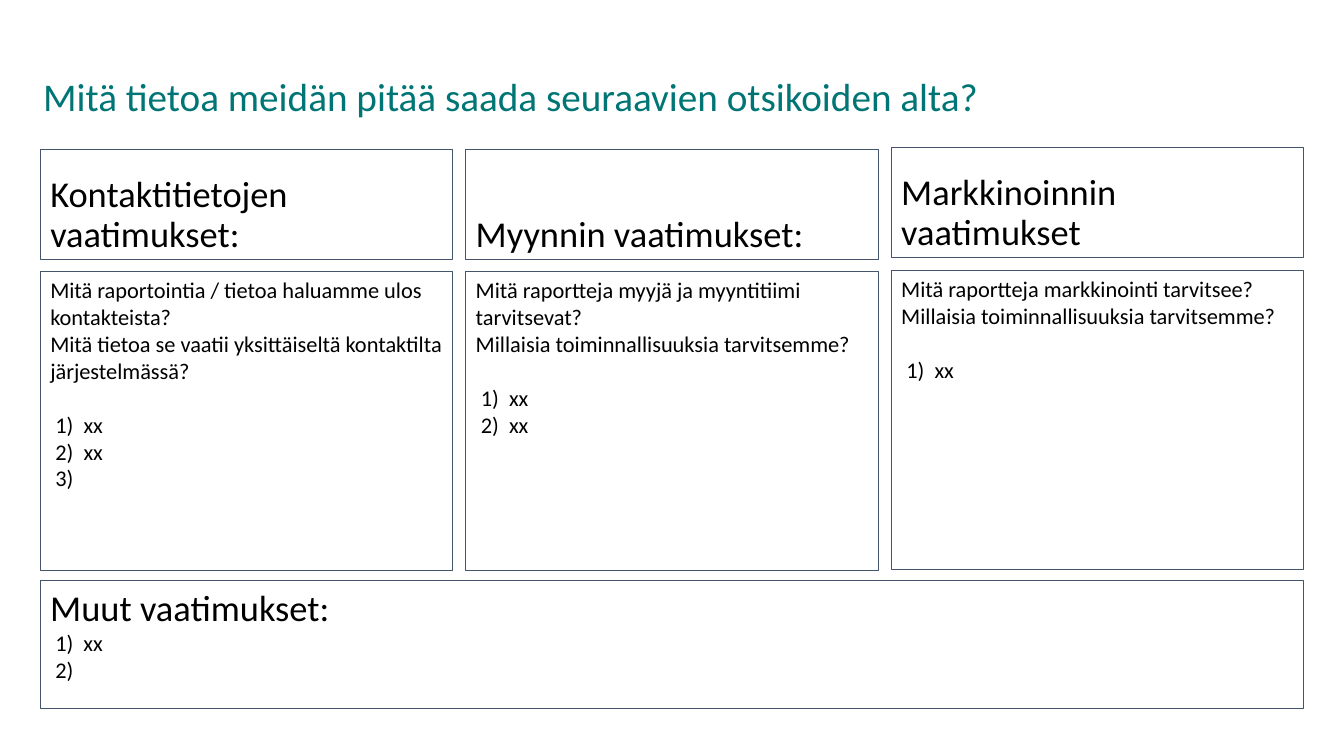
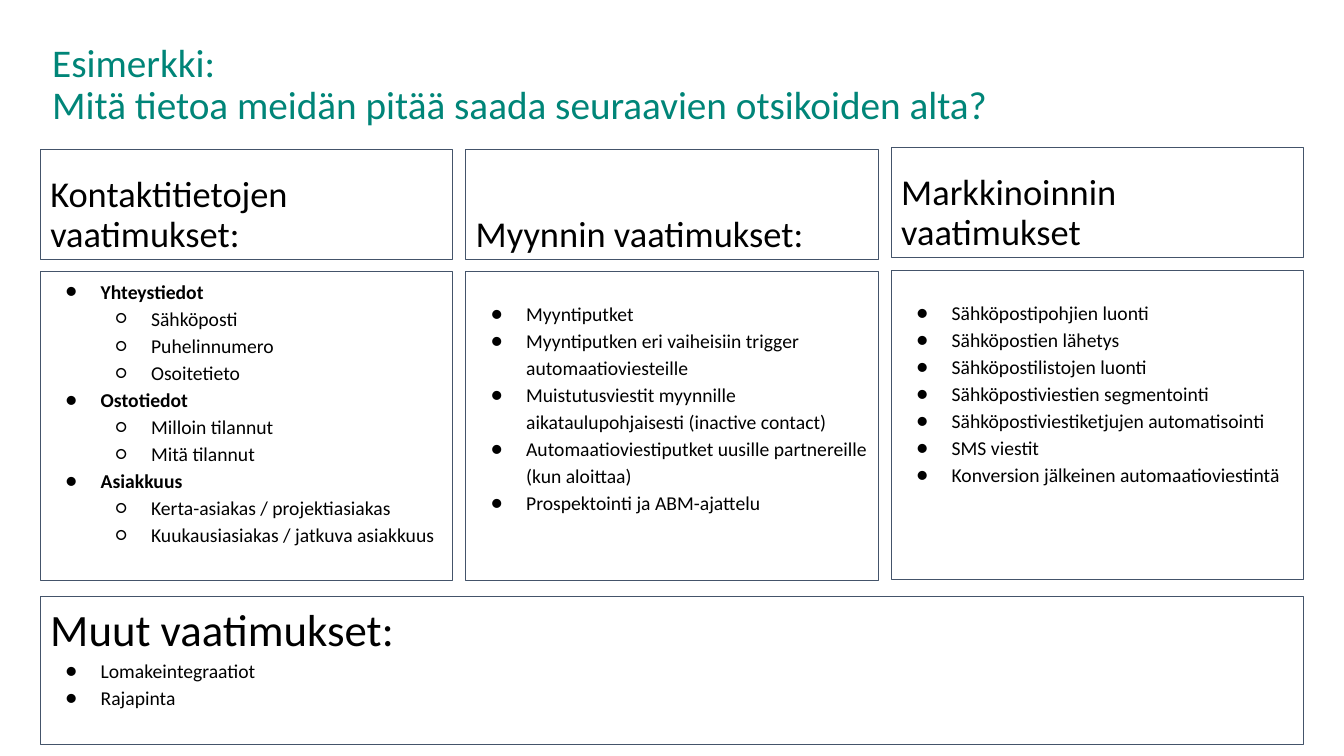
from dataclasses import dataclass

from lxml import etree
from pptx import Presentation
from pptx import util as u
from pptx.dml.color import RGBColor
from pptx.enum import shapes, text
from pptx.oxml import ns


@dataclass(frozen=True)
class Theme:
    font: str = "Calibri"
    ink: str = "000000"
    border: str = "44546A"
    teal: str = "007575"
    example_teal: str = "008578"
    title_size: int = 28
    heading_size: int = 26
    large_heading_size: int = 32
    question_size: int = 16
    bullet_size: int = 14


THEME = Theme()

# Three-column grid; the last column sits slightly higher
LEFT, COLUMN_WIDTH, COLUMN_STEP = 0.4, 4.09, 4.22
FULL_WIDTH = 2 * COLUMN_STEP + COLUMN_WIDTH
HEADING_TOPS = (1.48, 1.48, 1.46)
BODY_TOPS = (2.69, 2.69, 2.68)
HEADING_HEIGHT = 1.1
HEADINGS = ("Kontaktitietojen vaatimukset:", "Myynnin vaatimukset:",
            "Markkinoinnin vaatimukset")
OTHER_HEADING = "Muut vaatimukset:"
QUESTION = "Mitä tietoa meidän pitää saada seuraavien otsikoiden alta?"

# Questions and numbered answers for each column
QUESTION_COLUMNS = (
    (("Mitä raportointia / tietoa haluamme ulos kontakteista?",
      "Mitä tietoa se vaatii yksittäiseltä kontaktilta järjestelmässä?"),
     ("xx", "xx", " ")),
    (("Mitä raportteja myyjä ja myyntitiimi tarvitsevat?",
      "Millaisia toiminnallisuuksia tarvitsemme?"),
     ("xx", "xx")),
    (("Mitä raportteja markkinointi tarvitsee?",
      "Millaisia toiminnallisuuksia tarvitsemme?"),
     ("xx",)),
)

# Example answers: grouped contact data, then plain lists
CONTACT_GROUPS = {
    "Yhteystiedot": ("Sähköposti", "Puhelinnumero", "Osoitetieto"),
    "Ostotiedot": ("Milloin tilannut", "Mitä tilannut"),
    "Asiakkuus": ("Kerta-asiakas / projektiasiakas",
                  "Kuukausiasiakas / jatkuva asiakkuus"),
}
SALES_NEEDS = (
    "Myyntiputket",
    "Myyntiputken eri vaiheisiin trigger automaatioviesteille",
    "Muistutusviestit myynnille aikataulupohjaisesti (inactive contact)",
    "Automaatioviestiputket uusille partnereille (kun aloittaa)",
    "Prospektointi ja ABM-ajattelu",
)
MARKETING_NEEDS = (
    "Sähköpostipohjien luonti",
    "Sähköpostien lähetys",
    "Sähköpostilistojen luonti",
    "Sähköpostiviestien segmentointi",
    "Sähköpostiviestiketjujen automatisointi",
    "SMS viestit",
    "Konversion jälkeinen automaatioviestintä",
)
OTHER_NEEDS = ("Lomakeintegraatiot", "Rajapinta")


def set_up_frame(frame, side, top, anchor=text.MSO_ANCHOR.TOP):
    frame.word_wrap = True
    frame.vertical_anchor = anchor
    frame.margin_left = frame.margin_right = u.Inches(side)
    frame.margin_top, frame.margin_bottom = u.Inches(top), u.Inches(side / 2)


def add_panel(page, left, top, width, height, inset=0.05,
              anchor=text.MSO_ANCHOR.TOP):
    """Outlined rectangle; returns its text frame."""
    panel = page.shapes.add_shape(
        shapes.MSO_SHAPE.RECTANGLE, u.Inches(left), u.Inches(top),
        u.Inches(width), u.Inches(height))
    panel.shadow.inherit = False
    panel.fill.background()
    panel.line.color.rgb = RGBColor.from_string(THEME.border)
    panel.line.width = u.Pt(0.75)
    set_up_frame(panel.text_frame, 0.1, inset, anchor)
    return panel.text_frame


def add_para(frame, words, size, color=THEME.ink, bold=False, spacing=1.0,
             before=0):
    para = frame.paragraphs[0]
    if para.runs:
        para = frame.add_paragraph()
    para.alignment = text.PP_ALIGN.LEFT
    para.line_spacing = spacing
    para.space_before = u.Pt(before)
    span = para.add_run()
    span.text = words
    span.font.name = THEME.font
    span.font.size = u.Pt(size)
    span.font.bold = bold
    span.font.color.rgb = RGBColor.from_string(color)
    return para


def mark_para(para, indent, hanging, tag, **attributes):
    """Give a paragraph a hanging indent and a bullet or number."""
    props = para._p.get_or_add_pPr()
    props.set("marL", str(u.Inches(indent)))
    props.set("indent", str(-u.Inches(hanging)))
    color = etree.SubElement(props, ns.qn("a:buClr"))
    etree.SubElement(color, ns.qn("a:srgbClr"), val=THEME.ink)
    etree.SubElement(props, ns.qn("a:buFont"), typeface=THEME.font)
    etree.SubElement(props, ns.qn(tag), **attributes)


def add_numbers(frame, answers, gap=0):
    for index, answer in enumerate(answers):
        para = add_para(frame, answer, THEME.question_size,
                        before=0 if index else gap)
        mark_para(para, 0.33, 0.28, "a:buAutoNum", type="arabicParenR")


def add_bullets(frame, items, level=0, bold=False):
    for item in items:
        para = add_para(frame, item, THEME.bullet_size, bold=bold,
                        spacing=1.15)
        para.level = level
        mark_para(para, 0.5 * (level + 1), 0.35, "a:buChar",
                  char="●○"[level])


def add_title(page, lines, left, top, height, color):
    box = page.shapes.add_textbox(u.Inches(left), u.Inches(top),
                                  u.Inches(10.83), u.Inches(height))
    set_up_frame(box.text_frame, 0.1, 0.1)
    for line in lines:
        add_para(box.text_frame, line, THEME.title_size, color, spacing=0.9)


def add_columns(page, height, insets=(0.05, 0.05, 0.05)):
    """Heading row and body row; returns the body text frames."""
    bodies = []
    for index, heading in enumerate(HEADINGS):
        left = LEFT + index * COLUMN_STEP
        frame = add_panel(page, left, HEADING_TOPS[index], COLUMN_WIDTH,
                          HEADING_HEIGHT, anchor=text.MSO_ANCHOR.BOTTOM)
        add_para(frame, heading, THEME.heading_size, spacing=0.9)
        bodies.append(add_panel(page, left, BODY_TOPS[index], COLUMN_WIDTH,
                                height, insets[index]))
    return bodies


def add_other_panel(page, top, height, size):
    frame = add_panel(page, LEFT, top, FULL_WIDTH, height)
    add_para(frame, OTHER_HEADING, size)
    return frame


def build_questions(page):
    add_title(page, (QUESTION,), 0.33, 0.67, 0.63, THEME.teal)
    for frame, (questions, answers) in zip(add_columns(page, 2.97),
                                           QUESTION_COLUMNS):
        for question in questions:
            add_para(frame, question, THEME.question_size)
        add_numbers(frame, answers, gap=19.5)
    other = add_other_panel(page, 5.76, 1.27, THEME.heading_size)
    add_numbers(other, ("xx", " "))


def build_example(page):
    add_title(page, ("Esimerkki:", QUESTION), 0.42, 0.33, 1.05,
              THEME.example_teal)
    contacts, sales, marketing = add_columns(page, 3.07, (0.05, 0.27, 0.27))
    for group, details in CONTACT_GROUPS.items():
        add_bullets(contacts, (group,), bold=True)
        add_bullets(contacts, details, level=1)
    add_bullets(sales, SALES_NEEDS)
    add_bullets(marketing, MARKETING_NEEDS)
    other = add_other_panel(page, 5.92, 1.47, THEME.large_heading_size)
    add_bullets(other, OTHER_NEEDS)


def main():
    deck = Presentation()
    deck.slide_width, deck.slide_height = u.Inches(13.33), u.Inches(7.5)
    for build in (build_questions, build_example):
        build(deck.slides.add_slide(deck.slide_layouts[6]))
    deck.save("out.pptx")


if __name__ == "__main__":
    main()
